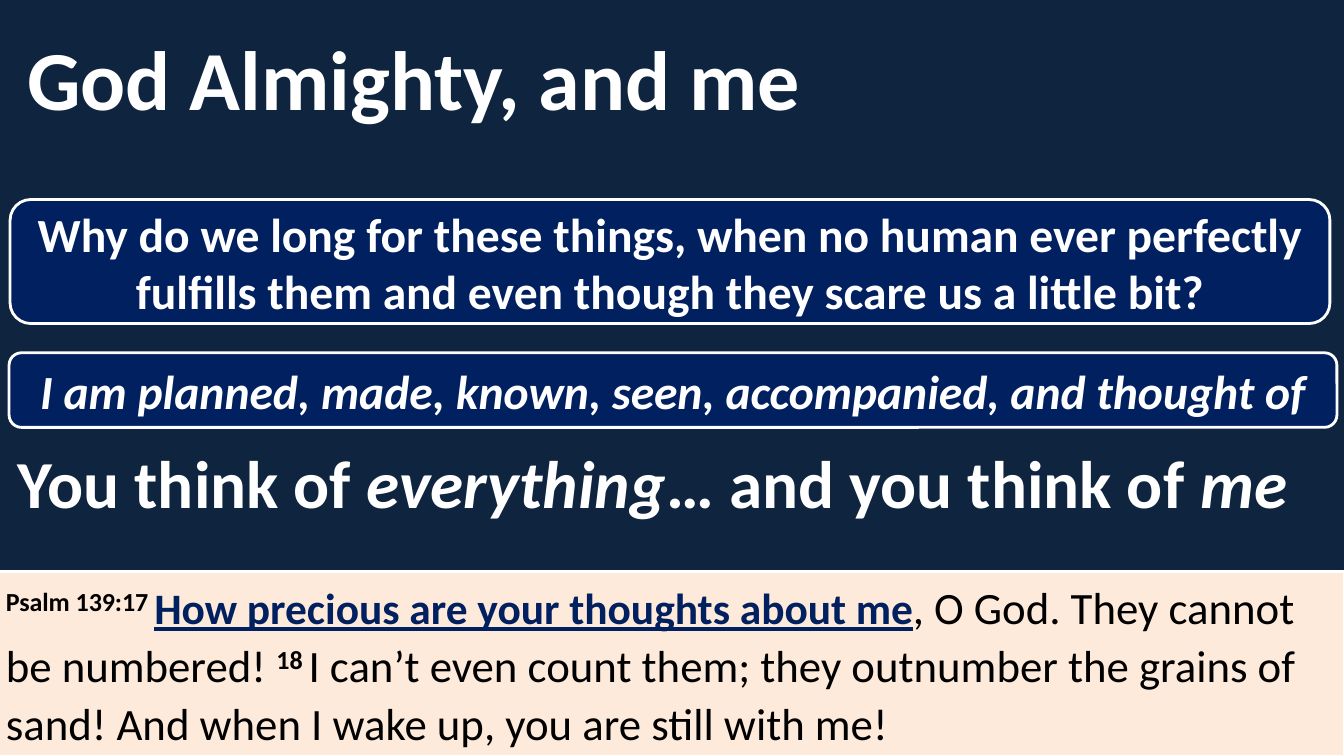
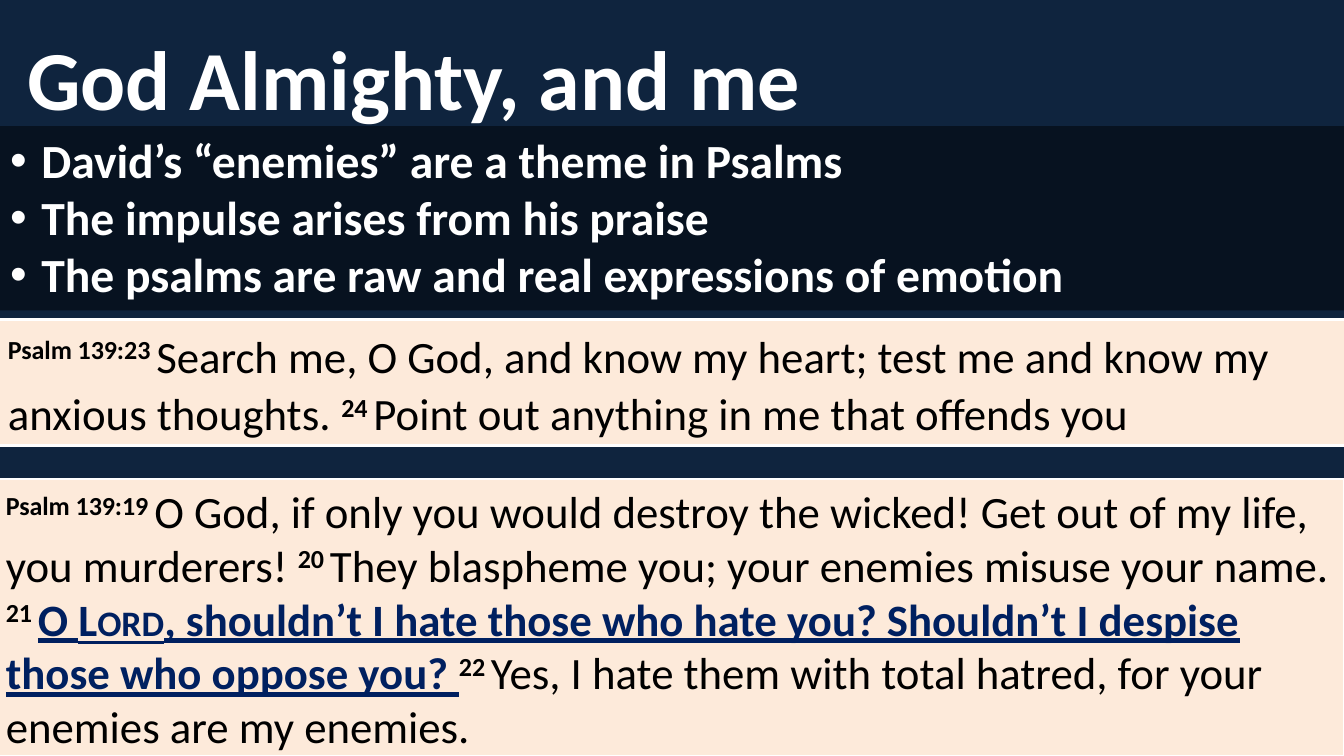
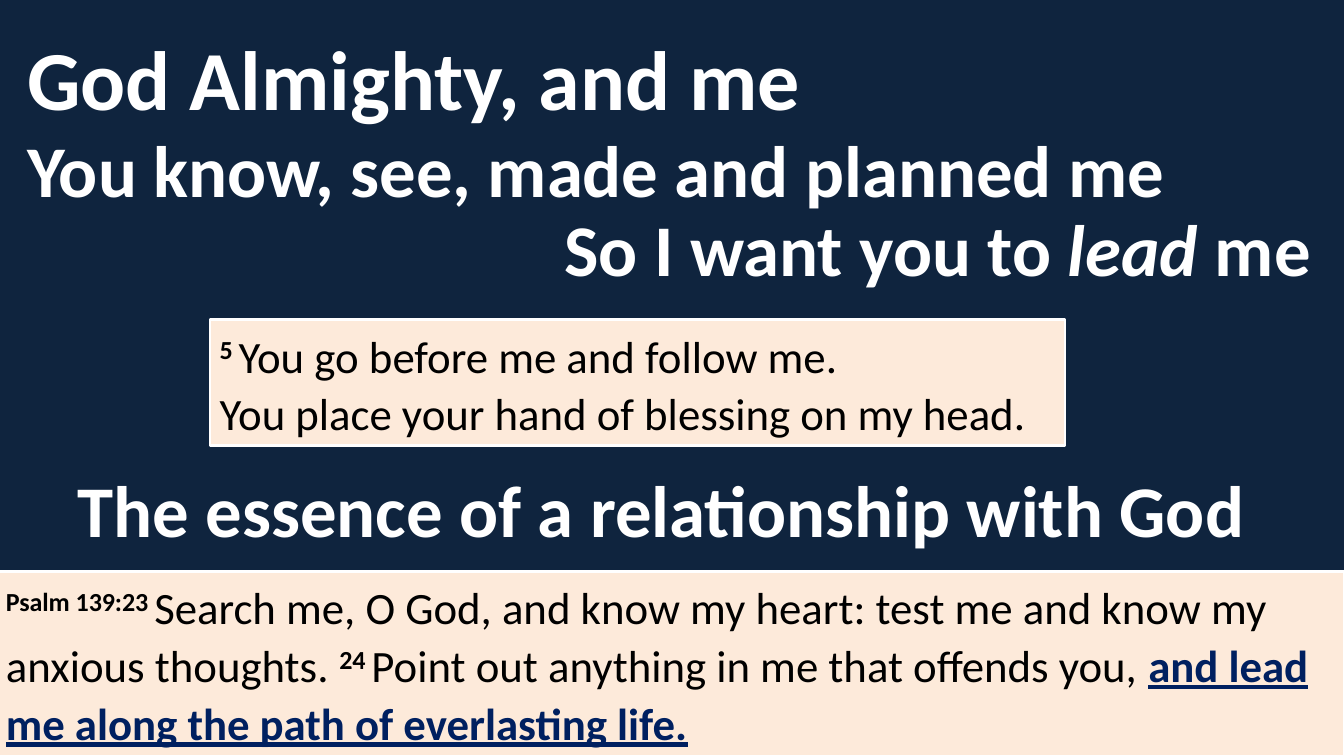
from lxml import etree
from pptx import Presentation
from pptx.dml.color import RGBColor
from pptx.enum.shapes import MSO_SHAPE
from pptx.enum.text import MSO_ANCHOR, PP_ALIGN
from pptx.oxml.ns import qn
from pptx.util import Inches, Pt

# Shared look
FONT = "Calibri"
NIGHT = RGBColor(0x0F, 0x24, 0x3E)
NAVY = RGBColor(0x00, 0x20, 0x60)
CREAM = RGBColor(0xFD, 0xEA, 0xDA)
WHITE = RGBColor(0xFF, 0xFF, 0xFF)
BLACK = RGBColor(0x00, 0x00, 0x00)

TITLE = "God Almighty, and me"
TITLE_ONLY, TITLE_AND_CONTENT = 5, 1

# Run styles
HEADING = dict(color=WHITE, bold=True)
STRESSED = dict(HEADING, italic=True)
VERSE = dict(size=32)
NUMBER = dict(size=32, bold=True, raised=True)
KEY = dict(size=32, color=NAVY, bold=True, underline=True)
KEY_CAPS = dict(KEY, small_caps=True)

# Places used on more than one slide
BOTTOM_VERSE = (-0.04, 5.67, 13.37, 1.83)


def place(sp, left, top, width, height):
    sp.left, sp.top = Inches(left), Inches(top)
    sp.width, sp.height = Inches(width), Inches(height)


def add_run(p, text, size, color=BLACK, bold=False, italic=False,
            underline=False, raised=False, small_caps=False):
    r = p.add_run()
    r.text = text
    font = r.font
    font.name, font.size, font.color.rgb = FONT, Pt(size), color
    font.bold, font.italic, font.underline = bold, italic, underline
    rPr = font._element
    if raised:
        rPr.set("baseline", "30000")
    if small_caps:
        rPr.set("cap", "small")


def fill_text(tf, paragraphs, anchor=MSO_ANCHOR.MIDDLE, align=PP_ALIGN.LEFT,
              spacing=1.0):
    """Write paragraphs, each a list of (text, style) runs."""
    tf.word_wrap = True
    tf.vertical_anchor = anchor
    for i, runs in enumerate(paragraphs):
        p = tf.add_paragraph() if i else tf.paragraphs[0]
        p.alignment, p.line_spacing, p.space_before = align, spacing, Pt(0)
        for text, style in runs:
            add_run(p, text, **style)


def add_slide(prs, layout=TITLE_ONLY):
    slide = prs.slides.add_slide(prs.slide_layouts[layout])
    title = slide.shapes.title
    place(title, 0.17, 0.14, 7.92, 1.25)
    fill_text(title.text_frame, [[(TITLE, dict(HEADING, size=60))]])
    return slide


def add_heading(slide, box, size, *runs):
    sp = slide.shapes.add_textbox(*map(Inches, box))
    fill_text(sp.text_frame, [[(t, dict(style, size=size)) for t, style in runs]])


def add_panel(slide, kind, box, fill, line_width):
    sp = slide.shapes.add_shape(kind, *map(Inches, box))
    sp.shadow.inherit = False
    sp.fill.solid()
    sp.fill.fore_color.rgb = fill
    sp.line.color.rgb = WHITE
    sp.line.width = Pt(line_width)
    return sp


def add_verse(slide, box, *paragraphs, spacing=1.07):
    sp = add_panel(slide, MSO_SHAPE.RECTANGLE, box, CREAM, 1.5)
    fill_text(sp.text_frame, paragraphs, MSO_ANCHOR.TOP, spacing=spacing)


def add_callout(slide, box, text, style):
    sp = add_panel(slide, MSO_SHAPE.ROUNDED_RECTANGLE, box, NAVY, 2)
    fill_text(sp.text_frame, [[(text, dict(style, size=34))]],
              align=PP_ALIGN.CENTER)


def add_bullets(slide, box, items):
    """Bulleted body on a see-through black band."""
    sp = slide.placeholders[1]
    place(sp, *box)
    sp.fill.solid()
    sp.fill.fore_color.rgb = BLACK
    color = sp.fill._xPr.find(qn("a:solidFill"))[0]
    etree.SubElement(color, qn("a:alpha")).set("val", "48000")
    fill_text(sp.text_frame, [[(t, dict(HEADING, size=34))] for t in items],
              MSO_ANCHOR.TOP)
    for p in sp.text_frame.paragraphs:
        pPr = p._p.get_or_add_pPr()
        pPr.set("marL", str(Inches(0.31)))
        pPr.set("indent", str(-Inches(0.31)))
        etree.SubElement(pPr, qn("a:buFont")).set("typeface", "Arial")
        etree.SubElement(pPr, qn("a:buChar")).set("char", "•")


def thoughts_slide(prs):
    slide = add_slide(prs)
    add_verse(slide, BOTTOM_VERSE, [
        ("Psalm 139:17 ", NUMBER),
        ("How precious are your thoughts about me", dict(KEY, size=31)),
        (", O God. They cannot be numbered! ", VERSE),
        ("18 ", NUMBER),
        ("I can’t even count them; they outnumber the grains of sand! "
         "And when I wake up, you are still with me!", VERSE)])
    add_heading(slide, (0.08, 4.15, 13.37, 1.25), 48,
                ("You think of ", HEADING), ("everything", STRESSED),
                ("… and you think of ", HEADING), ("me", STRESSED))
    add_callout(slide, (0.1, 1.98, 13.09, 1.23),
                "Why do we long for these things, when no human ever perfectly "
                "fulfills them and even though they scare us a little bit?",
                HEADING)
    add_callout(slide, (0.09, 3.5, 13.17, 0.74),
                "I am planned, made, known, seen, accompanied, and thought of",
                STRESSED)


def enemies_slide(prs):
    slide = add_slide(prs, TITLE_AND_CONTENT)
    add_bullets(slide, (0, 1.25, 13.33, 1.83), [
        "David’s “enemies” are a theme in Psalms",
        "The impulse arises from his praise",
        "The psalms are raw and real expressions of emotion"])
    add_verse(slide, (-0.02, 3.17, 13.37, 1.25), [
        ("Psalm 139:23 ", NUMBER),
        ("Search me, O God, and know my heart; test me and know my "
         "anxious thoughts. ", VERSE),
        ("24 ", NUMBER),
        ("Point out anything in me that offends you", VERSE)])
    add_verse(slide, (-0.04, 4.75, 13.37, 2.75), [
        ("Psalm 139:19 ", NUMBER),
        ("O God, if only you would destroy the wicked! Get out of my life, "
         "you murderers! ", VERSE),
        ("20 ", NUMBER),
        ("They blaspheme you; your enemies misuse your name. ", VERSE),
        ("21 ", NUMBER),
        ("O ", KEY), ("Lord", KEY_CAPS),
        (", shouldn’t I hate those who hate you? Shouldn’t I despise "
         "those who oppose you? ", KEY),
        ("22 ", NUMBER),
        ("Yes, I hate them with total hatred, for your enemies are "
         "my enemies.", VERSE)], spacing=1.0)


def lead_me_slide(prs):
    slide = add_slide(prs)
    add_verse(slide, BOTTOM_VERSE, [
        ("Psalm 139:23 ", NUMBER),
        ("Search me, O God, and know my heart: test me and know my "
         "anxious thoughts. ", VERSE),
        ("24 ", NUMBER),
        ("Point out anything in me that offends you, ", VERSE),
        ("and lead me along the path of everlasting life.", KEY)])
    add_heading(slide, (0.17, 1.05, 13.29, 1.25), 52,
                ("You know, see, made and planned me", HEADING))
    add_heading(slide, (5.5, 1.83, 7.83, 1.25), 52,
                ("So I want you to ", HEADING), ("lead", STRESSED),
                (" me", HEADING))
    add_verse(slide, (2.08, 3.17, 8.48, 1.25),
              [("5 ", NUMBER), ("You go before me and follow me.", VERSE)],
              [("You place your hand of blessing on my head.", VERSE)])
    add_heading(slide, (0.67, 4.42, 13.29, 1.25), 52,
                ("The essence of a relationship with God", HEADING))


def main():
    prs = Presentation()
    prs.slide_width, prs.slide_height = Inches(13.33), Inches(7.5)
    background = prs.slide_master.background.fill
    background.solid()
    background.fore_color.rgb = NIGHT
    thoughts_slide(prs)
    enemies_slide(prs)
    lead_me_slide(prs)
    prs.save("out.pptx")


if __name__ == "__main__":
    main()
